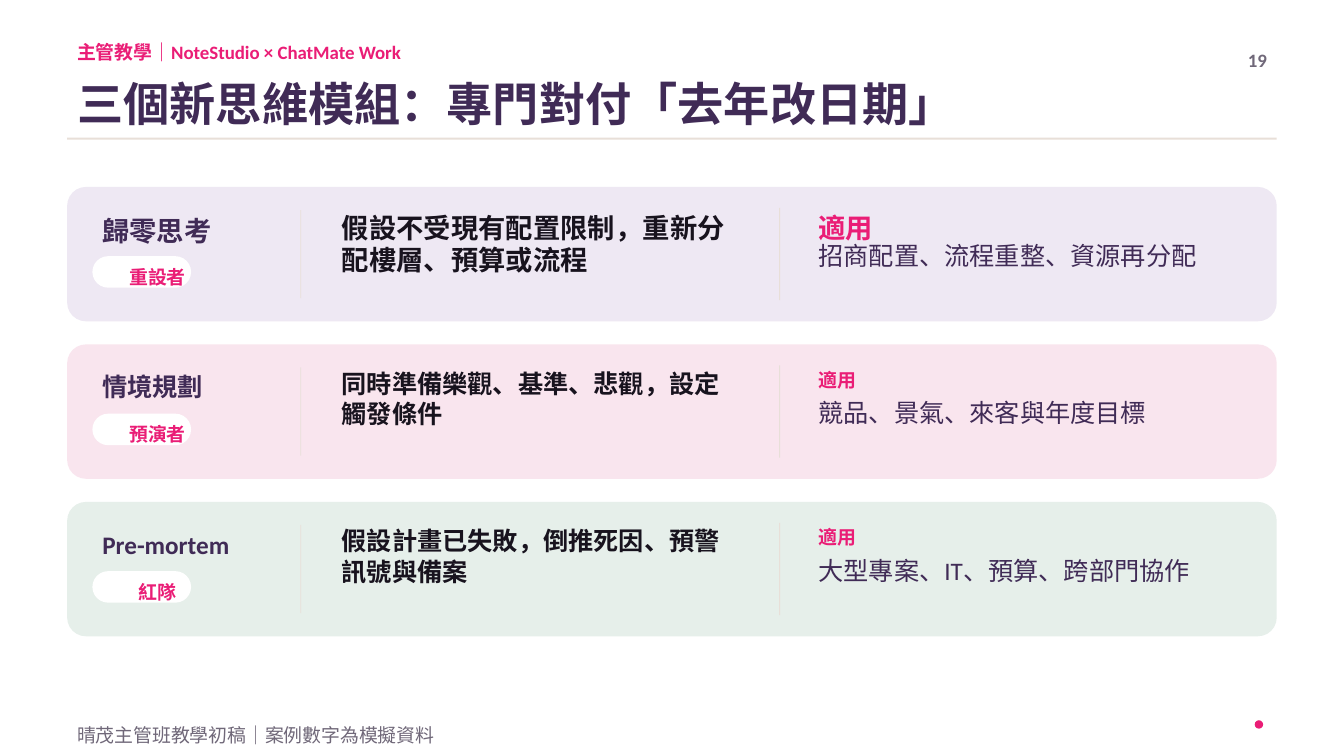
import pptx
import pptx.util
from pptx.dml.color import RGBColor
from pptx.enum.shapes import MSO_SHAPE
from pptx.enum.text import MSO_ANCHOR, MSO_AUTO_SIZE, PP_ALIGN

COLS, ROWS = 1280, 720  # slide grid
UNIT = pptx.util.Emu(9525)
LEFT, WIDTH = 64, 1152
CARD_TOP, CARD_HEIGHT, CARD_PITCH = 178, 128, 150
FONT = "Calibri"
COLORS = {
    "pink": "EA1D76", "plum": "402B56", "ink": "18131E", "gray": "706879",
    "rule": "E8DFD8", "white": "FFFFFF",
    "lilac": "EEE8F3", "rose": "F9E5EE", "mint": "E6EFEA",
}
MODULES = [
    dict(name="歸零思考", role="重設者", fill="lilac", size=19.5, label_size=19.5,
         idea="假設不受現有配置限制，重新分配樓層、預算或流程",
         uses="招商配置、流程重整、資源再分配"),
    dict(name="情境規劃", role="預演者", fill="rose",
         idea="同時準備樂觀、基準、悲觀，設定觸發條件",
         uses="競品、景氣、來客與年度目標"),
    dict(name="Pre-mortem", role="紅隊", fill="mint",
         idea="假設計畫已失敗，倒推死因、預警訊號與備案",
         uses="大型專案、IT、預算、跨部門協作"),
]


def grid(*units):
    return [UNIT * u for u in units]


def color(name):
    return RGBColor.from_string(COLORS[name])


def write(sp, text, size=13.5, fill="plum", bold=True, align=PP_ALIGN.LEFT):
    tf = sp.text_frame
    tf.word_wrap = True
    tf.auto_size = MSO_AUTO_SIZE.NONE
    tf.vertical_anchor = MSO_ANCHOR.TOP
    p = tf.paragraphs[0]
    p.alignment = align
    r = p.add_run()
    r.text = text
    r.font.name = FONT
    r.font.size = pptx.util.Pt(size)
    r.font.bold = bold
    r.font.color.rgb = color(fill)


def add_text(s, box, text, **style):
    write(s.shapes.add_textbox(*grid(*box)), text, **style)


def add_block(s, box, fill, kind=MSO_SHAPE.RECTANGLE, radius=None):
    sp = s.shapes.add_shape(kind, *grid(*box))
    sp.shadow.inherit = False
    sp.fill.solid()
    sp.fill.fore_color.rgb = color(fill)
    sp.line.fill.background()
    if radius is not None:
        sp.adjustments[0] = radius


def add_header(s, x, y, w):
    add_text(s, (x, y, 720, 24), "主管教學｜NoteStudio × ChatMate Work", fill="pink")
    title = s.shapes.title
    title.left, title.top, title.width, title.height = grid(x, y + 33, 1060, 58)
    write(title, "三個新思維模組：專門對付「去年改日期」", size=33)
    add_text(s, (x + w - 56, y + 8, 56, 34), "19", fill="gray", align=PP_ALIGN.RIGHT)
    add_block(s, (x, y + 97, w, 2), "rule")


def add_module(s, x, y, w, h, name, role, idea, uses, fill, size=18, label_size=13.5):
    """Draw one card: name and role, idea, and uses, split by two dividers."""
    rounded = MSO_SHAPE.ROUNDED_RECTANGLE
    add_block(s, (x, y, w, h), fill, rounded, 0.14)

    add_text(s, (x + 24, y + 21, 170, 28), name, size=size)
    add_block(s, (x + 24, y + 66, 94, 30), "white", rounded, 0.5)
    add_text(s, (x + 36, y + 70, 100, 30), role, fill="pink", align=PP_ALIGN.CENTER)

    add_block(s, (x + 222, y + 22, 1, h - 44), "rule")
    add_text(s, (x + 252, y + 18, 400, 74), idea, size=size, fill="ink")

    add_block(s, (x + 678, y + 20, 1, h - 40), "rule")
    add_text(s, (x + 706, y + 18, 100, 30), "適用", size=label_size, fill="pink")
    add_text(s, (x + 706, y + 46, 408, 58), uses, size=18, bold=False)


def add_footer(s, x, y, w):
    add_text(s, (x, y, 1040, 18), "晴茂主管班教學初稿｜案例數字為模擬資料",
             fill="gray", bold=False)
    add_block(s, (x + w - 21, y + 2, 8, 8), "pink", MSO_SHAPE.OVAL)


def main():
    prs = pptx.Presentation()
    prs.slide_width, prs.slide_height = grid(COLS, ROWS)
    s = prs.slides.add_slide(prs.slide_layouts[5])
    s.background.fill.solid()
    s.background.fill.fore_color.rgb = color("white")
    add_header(s, LEFT, 34, WIDTH)
    for i, module in enumerate(MODULES):
        add_module(s, LEFT, CARD_TOP + i * CARD_PITCH, WIDTH, CARD_HEIGHT, **module)
    add_footer(s, LEFT, 684, WIDTH)
    prs.save("out.pptx")


if __name__ == "__main__":
    main()
